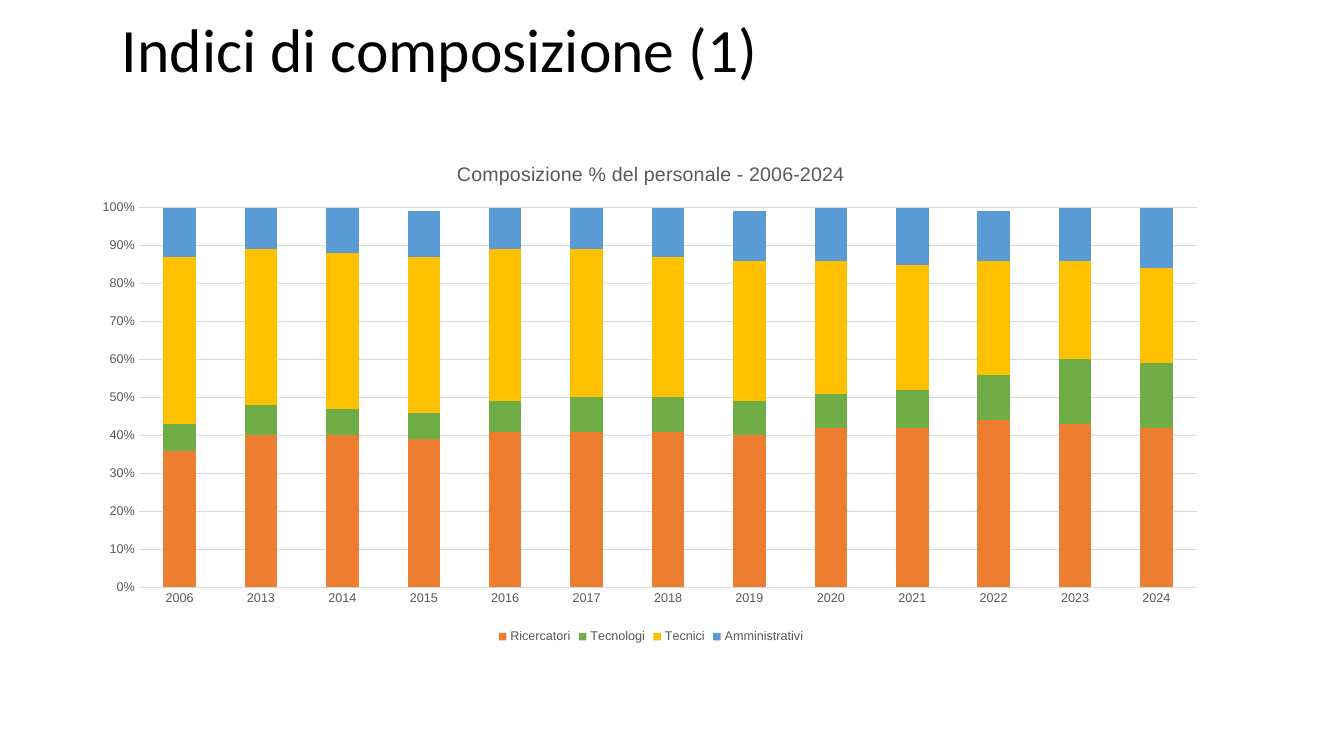
import pptx
import pptx.util
import pptx.dml.color
import pptx.chart.data
import pptx.enum.chart
import pptx.enum.text
import pptx.oxml

COLORS = {
    "black": "000000",
    "gray": "595959",
    "grid": "D9D9D9",
    "Ricercatori": "ED7D31",
    "Tecnologi": "70AD47",
    "Tecnici": "FFC000",
    "Amministrativi": "5B9BD5",
}
YEARS = ["2006"] + [str(year) for year in range(2013, 2025)]
STAFF = {
    "Ricercatori": [0.36, 0.4, 0.4, 0.39, 0.41, 0.41, 0.41, 0.4, 0.42, 0.42, 0.44, 0.43, 0.42],
    "Tecnologi": [0.07, 0.08, 0.07, 0.07, 0.08, 0.09, 0.09, 0.09, 0.09, 0.1, 0.12, 0.17, 0.17],
    "Tecnici": [0.44, 0.41, 0.41, 0.41, 0.4, 0.39, 0.37, 0.37, 0.35, 0.33, 0.3, 0.26, 0.25],
    "Amministrativi": [0.14, 0.12, 0.12, 0.12, 0.11, 0.11, 0.13, 0.13, 0.14, 0.15, 0.13, 0.14, 0.16],
}
LAYOUT = (
    '<c:layout xmlns:c="http://schemas.openxmlformats.org/drawingml/2006/chart">'
    '<c:manualLayout><c:layoutTarget val="inner"/>'
    '<c:xMode val="edge"/><c:yMode val="edge"/>'
    '<c:x val="{}"/><c:y val="{}"/><c:w val="{}"/><c:h val="{}"/>'
    "</c:manualLayout></c:layout>"
)


class Deck:
    scale = 914400 / 100.8

    def __init__(self, width, height):
        self.prs = pptx.Presentation()
        self.prs.slide_width = self.px(width)
        self.prs.slide_height = self.px(height)
        self.slide = self.prs.slides.add_slide(self.prs.slide_layouts[6])

    def px(self, size):
        return pptx.util.Emu(round(size * self.scale))

    def color(self, name):
        return pptx.dml.color.RGBColor.from_string(COLORS[name])

    def style(self, font, size, color, face="Arial"):
        font.name = face
        font.size = pptx.util.Pt(size)
        font.bold = False
        font.color.rgb = self.color(color)

    def rule(self, line):
        line.color.rgb = self.color("grid")
        line.width = pptx.util.Pt(0.75)

    def title(self, text, *place):
        box = self.slide.shapes.add_textbox(*map(self.px, place))
        frame = box.text_frame
        frame.word_wrap = True
        frame.vertical_anchor = pptx.enum.text.MSO_ANCHOR.MIDDLE
        frame.text = text
        par = frame.paragraphs[0]
        par.line_spacing = 0.9
        self.style(par.runs[0].font, 44, "black", "Calibri")

    def axis(self, axis):
        axis.major_tick_mark = pptx.enum.chart.XL_TICK_MARK.NONE
        axis.minor_tick_mark = pptx.enum.chart.XL_TICK_MARK.NONE
        self.style(axis.tick_labels.font, 9, "gray")

    def chart(self, text, cats, table, *place):
        data = pptx.chart.data.CategoryChartData(number_format="0%")
        data.categories = cats
        for name, vals in table.items():
            data.add_series(name, vals)
        kind = pptx.enum.chart.XL_CHART_TYPE.COLUMN_STACKED
        chart = self.slide.shapes.add_chart(kind, *map(self.px, place), data).chart
        self.style(chart.font, 10, "black")

        chart.has_title = True
        frame = chart.chart_title.text_frame
        frame.text = text
        self.style(frame.paragraphs[0].runs[0].font, 14, "gray")
        chart.chart_title.include_in_layout = False

        chart.has_legend = True
        chart.legend.position = pptx.enum.chart.XL_LEGEND_POSITION.BOTTOM
        chart.legend.include_in_layout = False
        self.style(chart.legend.font, 9, "gray")

        self.axis(chart.category_axis)
        self.rule(chart.category_axis.format.line)
        axis = chart.value_axis
        self.axis(axis)
        axis.format.line.fill.background()
        axis.minimum_scale = 0
        axis.maximum_scale = 1
        axis.major_unit = 0.1
        axis.has_major_gridlines = True
        self.rule(axis.major_gridlines.format.line)
        axis.tick_labels.number_format = "0%"
        axis.tick_labels.number_format_is_linked = False

        plot = chart.plots[0]
        plot.gap_width = 150
        plot.overlap = 100
        plot.vary_by_categories = False
        for series in plot.series:
            series.format.fill.solid()
            series.format.fill.fore_color.rgb = self.color(series.name)
        return chart

    def inset(self, chart, *parts):
        area = chart.plots._plotArea
        for old in area.xpath("c:layout"):
            area.remove(old)
        area.insert(0, pptx.oxml.parse_xml(LAYOUT.format(*parts)))

    def save(self):
        self.prs.save("out.pptx")


def main():
    deck = Deck(1344, 756)
    deck.title("Indici di composizione (1)", 112, -20, 1159, 146)
    chart = deck.chart(
        "Composizione % del personale - 2006-2024", YEARS, STAFF, 82, 142, 1138, 506
    )
    deck.inset(chart, 0.05, 0.13, 0.93, 0.75)
    deck.save()


if __name__ == "__main__":
    main()
